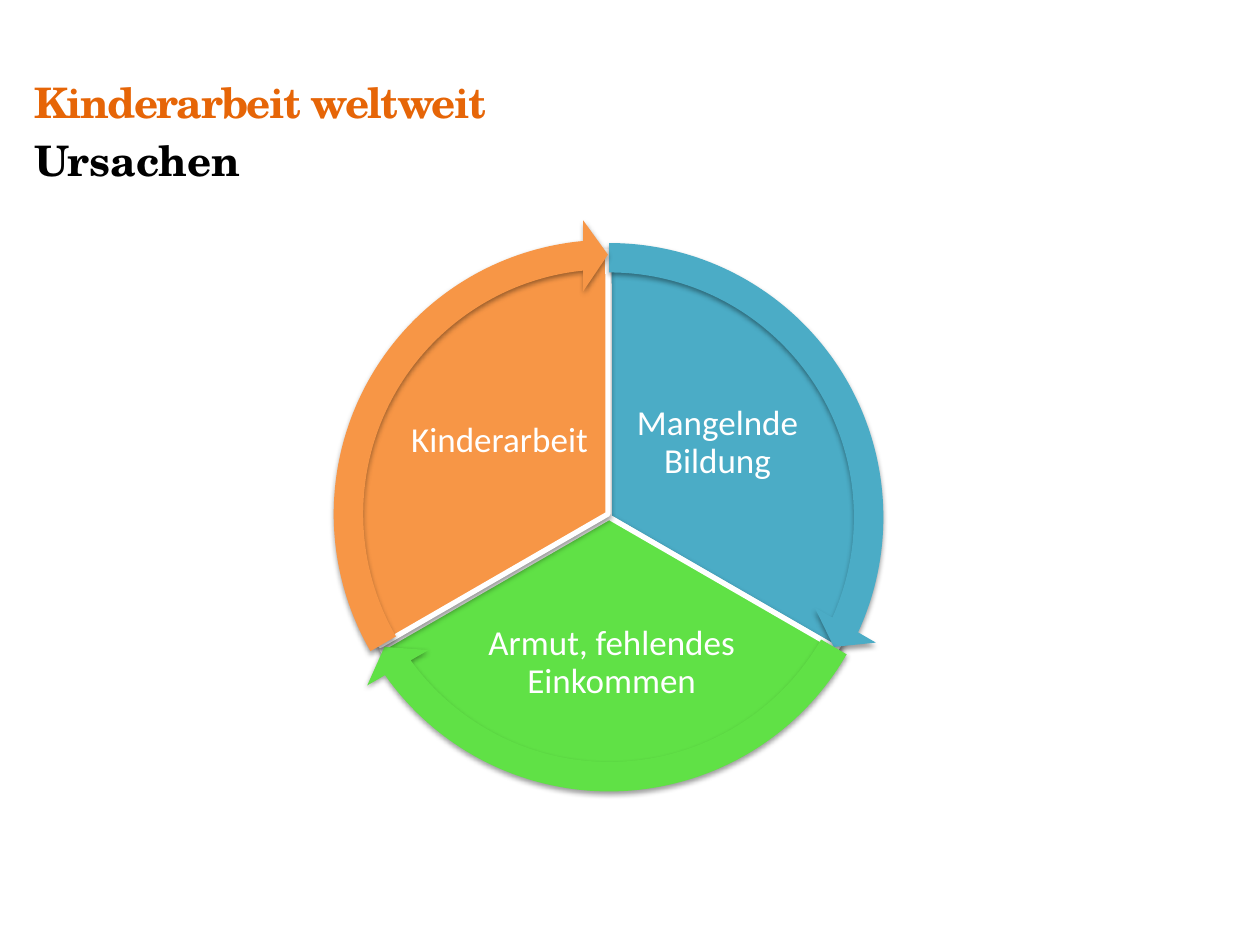
from dataclasses import dataclass

from lxml import etree
from pptx import Presentation, util as u
from pptx.dml.color import RGBColor
from pptx.enum import shapes, text
from pptx.oxml import ns

COLUMNS, ROWS = 100, 75
FULL_TURN = 216
THIRD = FULL_TURN / 3
TOP = 162
HEAD_ANGLE = 3.28
PIE_SIZE, RING_SIZE = 41.7, 46.8
COLOURS = {
    "title": "E66507",
    "subtitle": "000000",
    "white": "FFFFFF",
    "education": "4BACC6",
    "poverty": "60E146",
    "labour": "F79646",
}


@dataclass(frozen=True)
class Area:
    column: float
    row: float
    columns: float
    rows: float


@dataclass(frozen=True)
class Cause:
    label: str
    colour: str
    label_area: Area
    centre: tuple[float, float]


CAUSES = [
    Cause("Mangelnde Bildung", "education", Area(49.5, 29, 14.9, 12.4), (48.35, 41.05)),
    Cause("Armut, fehlendes Einkommen", "poverty", Area(37.4, 47.2, 22.3, 10.9), (48.35, 41.05)),
    Cause("Kinderarbeit", "labour", Area(32.2, 28.8, 14.9, 12.4), (48.25, 40.8)),
]

deck = Presentation()
deck.slide_width, deck.slide_height = u.Inches(10), u.Inches(7.5)
page = deck.slides.add_slide(deck.slide_layouts[6])


def place(area: Area) -> tuple[int, int, int, int]:
    column = deck.slide_width / COLUMNS
    row = deck.slide_height / ROWS
    return (
        round(area.column * column),
        round(area.row * row),
        round(area.columns * column),
        round(area.rows * row),
    )


def colour(name: str) -> RGBColor:
    return RGBColor.from_string(COLOURS[name])


def add_text_box(parent, area: Area, words: str, margin: float):
    box = parent.add_textbox(*place(area))
    frame = box.text_frame
    frame.word_wrap = True
    frame.margin_left = frame.margin_right = u.Inches(margin)
    frame.margin_top = frame.margin_bottom = u.Inches(margin)
    frame.text = words
    return frame


def style(span, font: str, size: float, name: str, bold: bool = False) -> None:
    span.font.name = font
    span.font.size = u.Pt(size)
    span.font.bold = bold
    span.font.color.rgb = colour(name)


def add_shadow(shape) -> None:
    shape.shadow.inherit = False
    effects = shape._element.spPr.find(ns.qn("a:effectLst"))
    shadow = etree.SubElement(
        effects, ns.qn("a:outerShdw"),
        blurRad=str(u.Pt(3.1)), dist=str(u.Pt(1.6)), dir="5400000", rotWithShape="0",
    )
    tint = etree.SubElement(shadow, ns.qn("a:srgbClr"), val="000000")
    etree.SubElement(tint, ns.qn("a:alpha"), val="38000")


def add_round(parent, kind, cause: Cause, size: float, angles: list[float]):
    x, y = cause.centre
    area = Area(x - size / 2, y - size / 2, size, size)
    shape = parent.add_shape(kind, *place(area))
    for index, value in enumerate(angles):
        shape.adjustments[index] = value
    shape.fill.solid()
    shape.fill.fore_color.rgb = colour(cause.colour)
    shape.line.fill.background()
    add_shadow(shape)
    return shape


def add_sector(parent, cause: Cause, start: float, end: float) -> None:
    pie = add_round(parent, shapes.MSO_SHAPE.PIE, cause, PIE_SIZE, [start, end])
    pie.line.color.rgb = colour("white")
    pie.line.width = u.Pt(3)
    frame = add_text_box(parent, cause.label_area, cause.label, 0.03)
    frame.vertical_anchor = text.MSO_ANCHOR.MIDDLE
    para = frame.paragraphs[0]
    para.alignment = text.PP_ALIGN.CENTER
    para.line_spacing = 0.9
    style(para.runs[0], "Calibri", 20, "white")


def add_arrow(parent, cause: Cause, start: float, end: float) -> None:
    angles = [0.05, HEAD_ANGLE, end - HEAD_ANGLE, start, 0.06]
    add_round(parent, shapes.MSO_SHAPE.CIRCULAR_ARROW, cause, RING_SIZE, angles)


def add_heading() -> None:
    frame = add_text_box(page.shapes, Area(2.7, 5.5, 85.1, 8.9), "Kinderarbeit weltweit\nUrsachen", 0)
    frame.auto_size = text.MSO_AUTO_SIZE.SHAPE_TO_FIT_TEXT
    for para, name in zip(frame.paragraphs, ("title", "subtitle")):
        para.line_spacing = u.Pt(33)
        style(para.runs[0], "TeX Gyre Schola", 24, name, bold=True)
    frame.paragraphs[0].runs[0]._r.get_or_add_rPr().set("spc", "-90")


def add_cycle() -> None:
    cycle = page.shapes.add_group_shape().shapes
    for draw in (add_sector, add_arrow):
        for index, cause in enumerate(CAUSES):
            start = (TOP + index * THIRD) % FULL_TURN
            draw(cycle, cause, start, (start + THIRD) % FULL_TURN)


def main() -> None:
    add_heading()
    add_cycle()
    deck.save("out.pptx")


if __name__ == "__main__":
    main()
